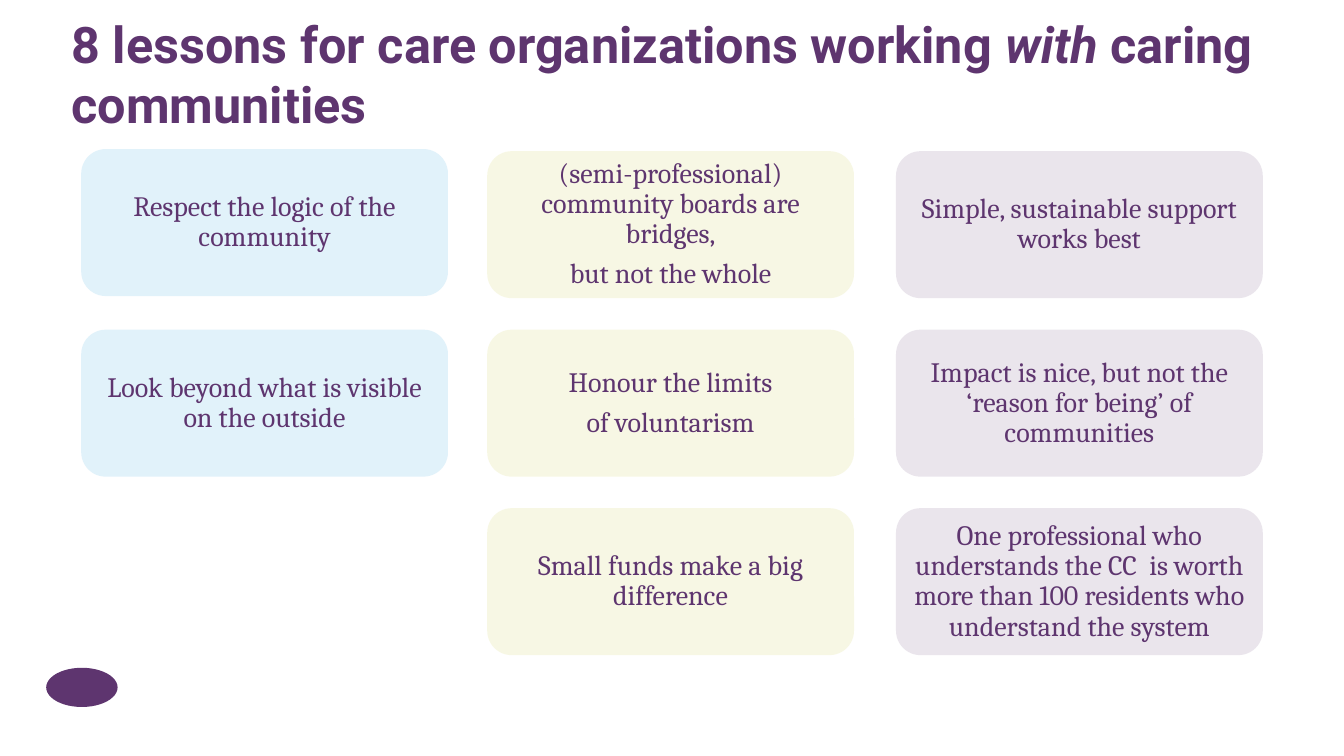
import pptx
import pptx.util
import pptx.dml.color
import pptx.enum.shapes
import pptx.enum.text
import pptx.oxml

Pt = pptx.util.Pt
SHAPE = pptx.enum.shapes.MSO_SHAPE
ALIGN = pptx.enum.text.PP_ALIGN
ANCHOR = pptx.enum.text.MSO_ANCHOR
FIT = pptx.enum.text.MSO_AUTO_SIZE

PURPLE = "5E356F"
WIDTH, HEIGHT = 262, 105
TOP, STEP = 108, 127.5

# Each column: left edge, tint, first top, lessons
COLUMNS = [
    (58, "C4E6F6", 106.5, [
        ["Respect the logic of the community"],
        ["Look beyond what is visible on the outside"],
    ]),
    (348, "F0F1CA", TOP, [
        ["(semi-professional) community boards are bridges,",
         "but not the whole"],
        ["Honour the limits", "of voluntarism"],
        ["Small funds make a big difference"],
    ]),
    (640, "D7CCDB", TOP, [
        ["Simple, sustainable support works best"],
        ["Impact is nice, but not the ‘reason for being’ of communities"],
        ["One professional who understands the CC  is worth more than "
         "100 residents who understand the system"],
    ]),
]


def paint(target, code, alpha=None):
    """Give a fill or a font a solid colour, with optional opacity."""
    if hasattr(target, "solid"):
        target.solid()
        color = target.fore_color
    else:
        color = target.color
    color.rgb = pptx.dml.color.RGBColor.from_string(code)
    if alpha is not None:
        node = target._xPr.find(".//" + pptx.oxml.ns.qn("a:srgbClr"))
        mark = pptx.oxml.parse_xml(
            "<a:alpha %s val='%d'/>" % (pptx.oxml.ns.nsdecls("a"), alpha * 1000))
        node.append(mark)


def style(font, name, size):
    font.name = name
    font.size = Pt(size)
    paint(font, PURPLE)


def inset(frame, gap):
    frame.margin_left = frame.margin_right = Pt(gap)
    frame.margin_top = frame.margin_bottom = Pt(gap)
    frame.word_wrap = True


def add_block(slide, kind, box, code, alpha=None):
    shape = slide.shapes.add_shape(kind, *[Pt(v) for v in box])
    shape.shadow.inherit = False
    paint(shape.fill, code, alpha)
    shape.line.fill.background()
    return shape


def add_title(slide, parts):
    title = slide.shapes.title
    title.left, title.top = Pt(51), Pt(9)
    title.width, title.height = Pt(855), Pt(99)
    frame = title.text_frame
    inset(frame, 0)
    frame.auto_size = FIT.NONE
    frame.vertical_anchor = ANCHOR.TOP
    para = frame.paragraphs[0]
    para.alignment = ALIGN.LEFT
    style(para.font, "Roboto", 36)
    para.font.bold = True
    for text, slant in parts:
        run = para.add_run()
        run.text = text
        run.font.italic = slant


def add_card(slide, left, top, code, lines):
    box = (left, top, WIDTH, HEIGHT)
    card = add_block(slide, SHAPE.ROUNDED_RECTANGLE, box, code, 50)
    frame = card.text_frame
    inset(frame, 5)
    frame.vertical_anchor = ANCHOR.MIDDLE
    frame.text = "\n".join(lines)
    for para in frame.paragraphs:
        para.alignment = ALIGN.CENTER
        para.line_spacing = 0.9
        para.space_after = Pt(7)
        style(para.font, "Cambria", 20)


def main():
    deck = pptx.Presentation()
    deck.slide_width, deck.slide_height = Pt(960), Pt(540)
    slide = deck.slides.add_slide(deck.slide_layouts[5])

    # Heading
    add_title(slide, [
        ("8 lessons for care organizations working ", False),
        ("with", True),
        (" caring communities", False),
    ])

    # Lesson cards
    for left, code, first, lessons in COLUMNS:
        for row, lines in enumerate(lessons):
            top = TOP + row * STEP if row else first
            add_card(slide, left, top, code, lines)

    # Plain corner mark
    add_block(slide, SHAPE.OVAL, (33, 477, 51, 28), PURPLE)

    deck.save("out.pptx")


if __name__ == "__main__":
    main()
